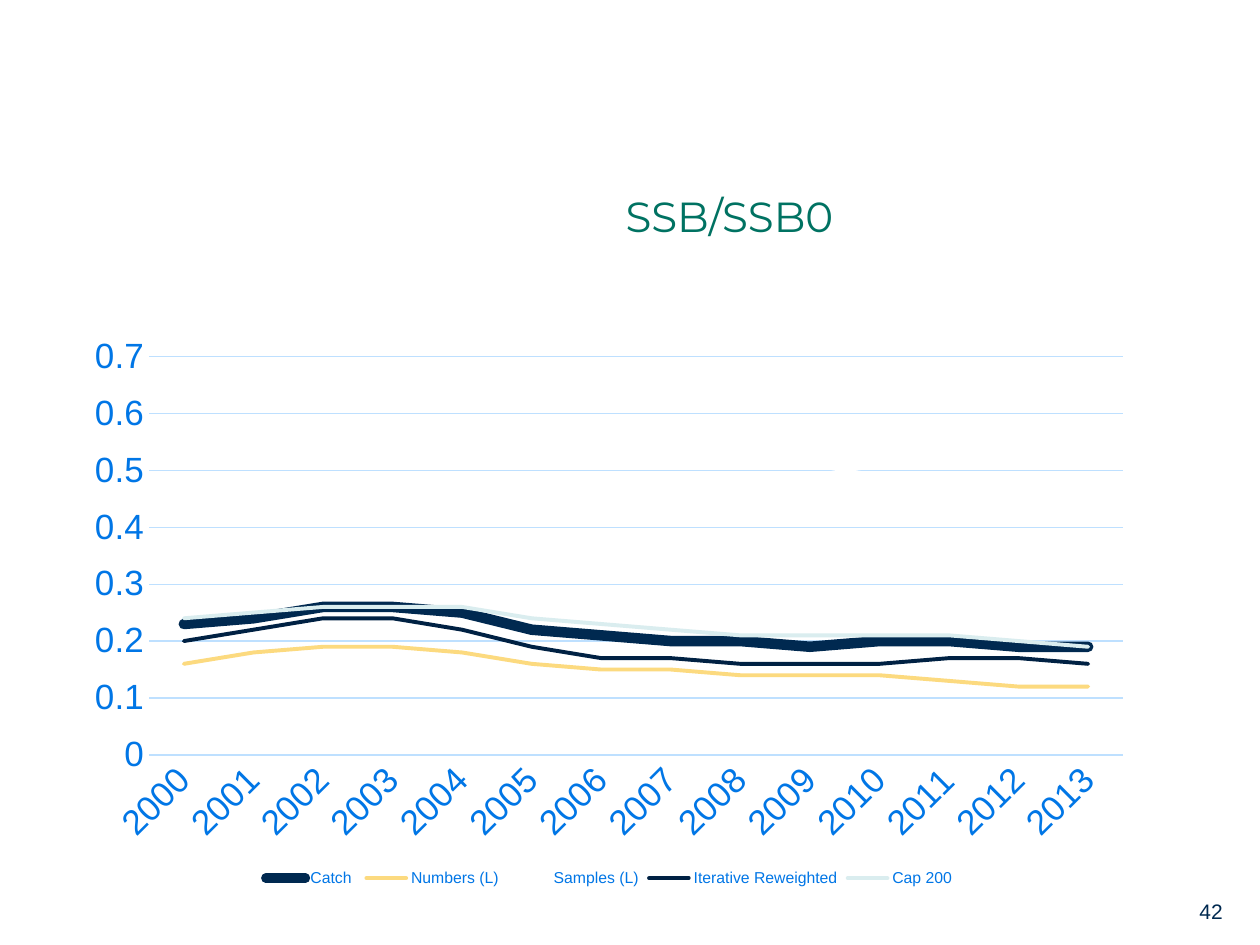
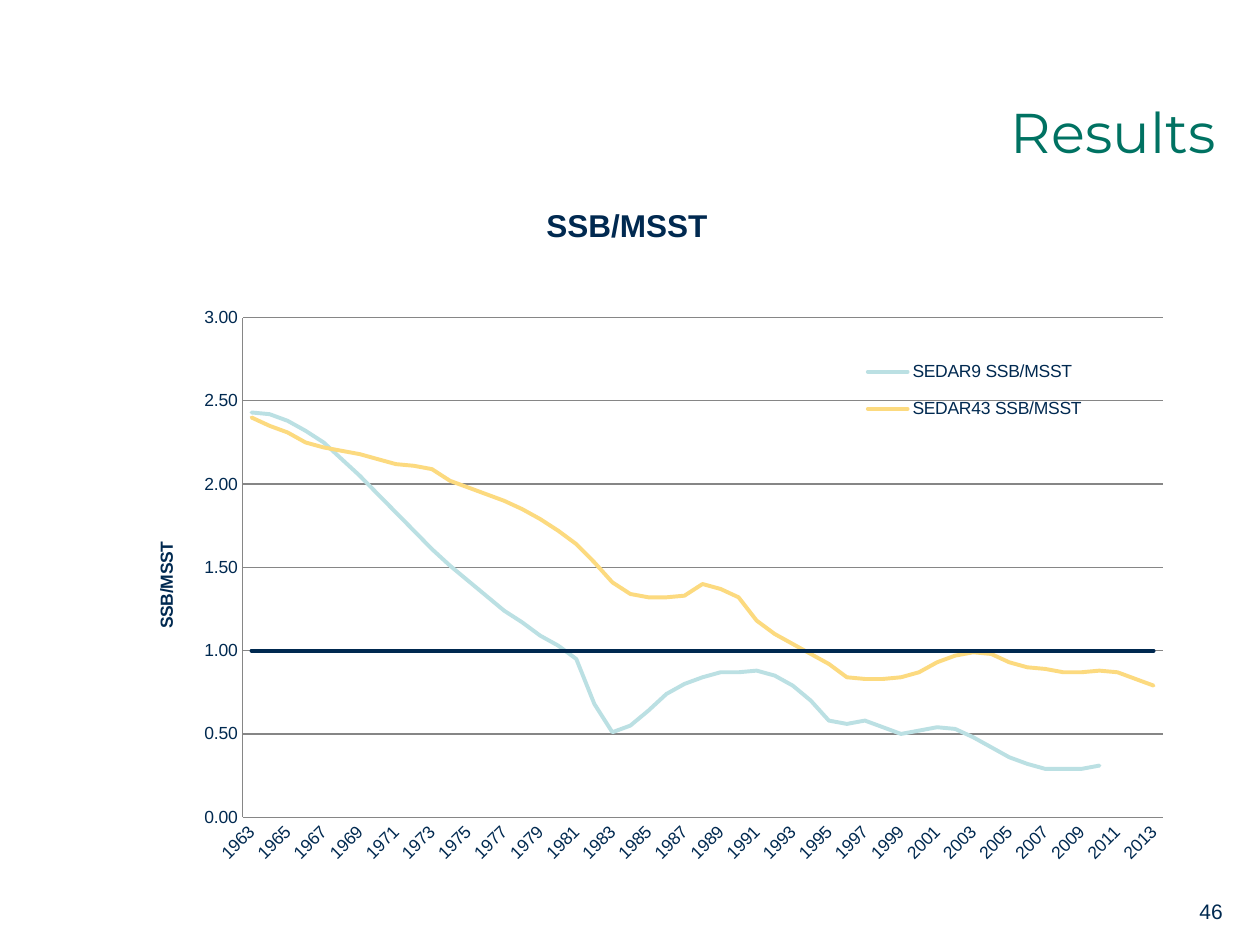
from lxml import etree
from pptx import Presentation
from pptx.chart.data import CategoryChartData
from pptx.dml.color import RGBColor
from pptx.enum import chart as ch, text
from pptx.oxml import ns
from pptx.util import Cm, Pt

NAVY, GREEN, BLUE, PALE_BLUE = "002950", "007262", "0076E6", "BEE0FF"
YELLOW, TEAL, MINT, INK, WHITE, GREY = "FCDA7F", "BBE0E3", "DAEDEF", "002143", "FFFFFF", "868686"
BODY, HEAD = "Arial", "Montserrat"
LEFT, CENTER, RIGHT = text.PP_ALIGN.LEFT, text.PP_ALIGN.CENTER, text.PP_ALIGN.RIGHT

DEPLETION = [
    ("Catch ", NAVY, 6, [0.23, 0.24, 0.26, 0.26, 0.25, 0.22, 0.21, 0.2, 0.2, 0.19, 0.2, 0.2, 0.19, 0.19]),
    ("Numbers (L)", YELLOW, 2.25,
     [0.16, 0.18, 0.19, 0.19, 0.18, 0.16, 0.15, 0.15, 0.14, 0.14, 0.14, 0.13, 0.12, 0.12]),
    ("Samples (L)", WHITE, 2.25,
     [0.57, 0.57, 0.57, 0.57, 0.57, 0.56, 0.55, 0.54, 0.53, 0.51, 0.49, 0.47, 0.44, 0.41]),
    ("Iterative Reweighted", INK, 2.25,
     [0.2, 0.22, 0.24, 0.24, 0.22, 0.19, 0.17, 0.17, 0.16, 0.16, 0.16, 0.17, 0.17, 0.16]),
    ("Cap 200", MINT, 2.25,
     [0.24, 0.25, 0.26, 0.26, 0.26, 0.24, 0.23, 0.22, 0.21, 0.21, 0.21, 0.21, 0.2, 0.19]),
]
STOCK_STATUS = [
    ("SEDAR9 SSB/MSST", TEAL, 2.25,
     [2.43, 2.42, 2.38, 2.32, 2.25, 2.15, 2.05, 1.94, 1.83, 1.72, 1.61, 1.51, 1.42, 1.33, 1.24, 1.17, 1.09,
      1.03, 0.95, 0.68, 0.51, 0.55, 0.64, 0.74, 0.8, 0.84, 0.87, 0.87, 0.88, 0.85, 0.79, 0.7, 0.58, 0.56,
      0.58, 0.54, 0.5, 0.52, 0.54, 0.53, 0.48, 0.42, 0.36, 0.32, 0.29, 0.29, 0.29, 0.31, None, None, None]),
    ("SEDAR43 SSB/MSST", YELLOW, 2.25,
     [2.4, 2.35, 2.31, 2.25, 2.22, 2.2, 2.18, 2.15, 2.12, 2.11, 2.09, 2.02, 1.98, 1.94, 1.9, 1.85, 1.79,
      1.72, 1.64, 1.53, 1.41, 1.34, 1.32, 1.32, 1.33, 1.4, 1.37, 1.32, 1.18, 1.1, 1.04, 0.98, 0.92, 0.84,
      0.83, 0.83, 0.84, 0.87, 0.93, 0.97, 0.99, 0.98, 0.93, 0.9, 0.89, 0.87, 0.87, 0.88, 0.87, 0.83, 0.79]),
    ("Series 3", NAVY, 2.25, [1] * 51),
]


def rgb(value):
    return RGBColor.from_string(value)


def style_font(font, size, color, name=BODY, bold=False):
    font.size, font.name, font.bold = Pt(size), name, bold
    font.color.rgb = rgb(color)


def style_line(line, color, width=0.75):
    line.color.rgb = rgb(color)
    line.width = Pt(width)


def chart_tag(name, value):
    tag = etree.Element(ns.qn(f"c:{name}"))
    tag.set("val", str(value))
    return tag


def set_layout(element, x, y, w=None, h=None, inner=False):
    for old in element.findall(ns.qn("c:layout")):
        element.remove(old)
    layout = etree.Element(ns.qn("c:layout"))
    manual = etree.SubElement(layout, ns.qn("c:manualLayout"))
    if inner:
        manual.append(chart_tag("layoutTarget", "inner"))
    manual.extend([chart_tag("xMode", "edge"), chart_tag("yMode", "edge")])
    for name, value in zip("xywh", (x, y, w, h)):
        if value is not None:
            manual.append(chart_tag(name, value))
    overlay = element.find(ns.qn("c:overlay"))
    if overlay is None:
        element.insert(0, layout)
    else:
        overlay.addprevious(layout)


def add_text(s, box, content, size, color, font=BODY, align=LEFT, anchor=text.MSO_ANCHOR.MIDDLE):
    tf = s.shapes.add_textbox(*map(Cm, box)).text_frame
    tf.word_wrap = True
    tf.vertical_anchor = anchor
    tf.text = content
    p = tf.paragraphs[0]
    p.alignment = align
    style_font(p.runs[0].font, size, color, font)


def add_slide(prs, title, box, size, align, number):
    s = prs.slides.add_slide(prs.slide_layouts[6])
    add_text(s, box, title, size, GREEN, HEAD, align)
    add_text(s, (23.93, 17.98, 1.4, 0.76), number, 12, NAVY, anchor=text.MSO_ANCHOR.TOP)
    return s


def add_line_chart(s, box, first_year, series, label_size, label_color, grid_color, top, step, number_format):
    data = CategoryChartData()
    data.categories = [str(first_year + i) for i in range(len(series[0][3]))]
    for name, _, _, values in series:
        data.add_series(name, values)
    chart = s.shapes.add_chart(ch.XL_CHART_TYPE.LINE, *map(Cm, box), data).chart
    style_font(chart.font, 10, NAVY)
    chart.has_title = False
    chart.plots[0].vary_by_categories = False
    for line, (_, color, width, _) in zip(chart.plots[0].series, series):
        line.smooth = False
        style_line(line.format.line, color, width)
        line.format.line._ln.set("cap", "rnd")
    years, values = chart.category_axis, chart.value_axis
    for axis in (years, values):
        axis.major_tick_mark = axis.minor_tick_mark = ch.XL_TICK_MARK.NONE
        style_font(axis.tick_labels.font, label_size, label_color)
        style_line(axis.format.line, grid_color)
    years._element.find(f"{ns.qn('c:txPr')}/{ns.qn('a:bodyPr')}").set("rot", "-2700000")
    values.minimum_scale, values.maximum_scale, values.major_unit = 0, top, step
    values.has_major_gridlines = True
    style_line(values.major_gridlines.format.line, grid_color)
    values.tick_labels.number_format = number_format
    values.tick_labels.number_format_is_linked = False
    chart.has_legend = True
    chart.legend.include_in_layout = False
    return chart


def set_heading(owner, content, size):
    tf = owner.text_frame
    tf.text = content
    style_font(tf.paragraphs[0].runs[0].font, size, NAVY, bold=True)


def depletion_slide(prs):
    s = add_slide(prs, "SSB/SSB0", (6.35, 3.18, 16.71, 2.34), 24, CENTER, "42")
    chart = add_line_chart(s, (1.48, 6.56, 21.59, 11.43), 2000, DEPLETION, 20, BLUE, PALE_BLUE,
                           0.7, 0.1, "General")
    chart.value_axis.format.line.fill.background()
    chart.legend.position = ch.XL_LEGEND_POSITION.BOTTOM
    style_font(chart.legend.font, 9, BLUE)


def stock_status_slide(prs):
    s = add_slide(prs, "Results", (13.13, 1.48, 11.63, 2.34), 32, RIGHT, "46")
    chart = add_line_chart(s, (1.48, 3.39, 22.43, 15.45), 1963, STOCK_STATUS, 10, NAVY, GREY,
                           3, 0.5, "0.00")
    set_heading(chart.chart_title, "SSB/MSST", 18)
    set_layout(chart.chart_title._element, 0.42, 0.04)
    set_heading(chart.value_axis.axis_title, "SSB/MSST", 10)
    chart.category_axis._element.find(ns.qn("c:lblOffset")).addnext(chart_tag("tickLblSkip", 2))
    set_layout(chart._chartSpace.chart.plotArea, 0.152, 0.195, 0.827, 0.652, inner=True)
    legend = chart.legend
    legend.position = ch.XL_LEGEND_POSITION.RIGHT
    style_font(legend.font, 10, NAVY)
    set_layout(legend._element, 0.69, 0.23, 0.24, 0.12)
    hidden = etree.Element(ns.qn("c:legendEntry"))
    hidden.extend([chart_tag("idx", 2), chart_tag("delete", 1)])
    legend._element.find(ns.qn("c:legendPos")).addnext(hidden)


def main():
    prs = Presentation()
    prs.slide_width, prs.slide_height = Cm(25.4), Cm(19.05)
    depletion_slide(prs)
    stock_status_slide(prs)
    prs.save("out.pptx")


if __name__ == "__main__":
    main()
